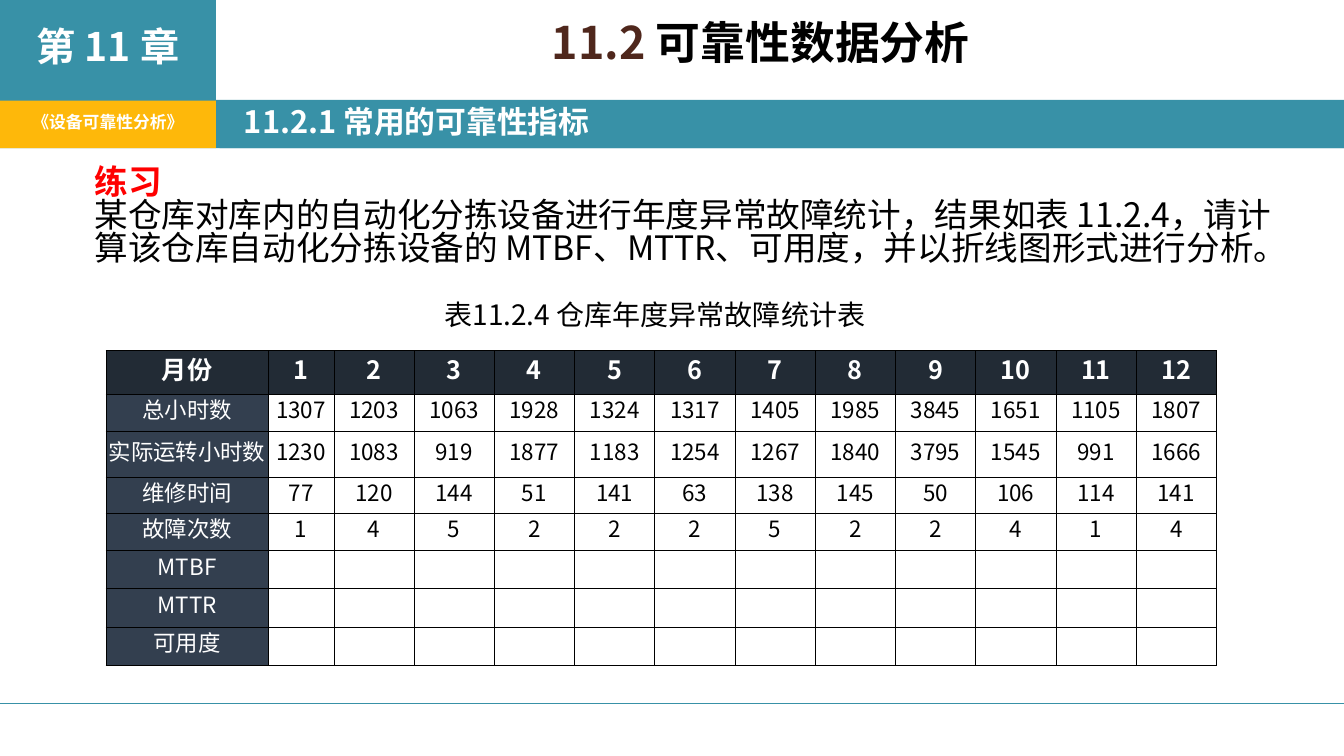
from lxml import etree
from pptx import Presentation
from pptx.dml.color import RGBColor
from pptx.enum.shapes import MSO_CONNECTOR, MSO_SHAPE
from pptx.enum.text import MSO_ANCHOR, MSO_AUTO_SIZE, PP_ALIGN
from pptx.oxml.ns import qn
from pptx.util import Inches, Pt

RECTANGLE = MSO_SHAPE.RECTANGLE
STRAIGHT = MSO_CONNECTOR.STRAIGHT
TOP, MIDDLE = MSO_ANCHOR.TOP, MSO_ANCHOR.MIDDLE
LEFT, CENTER = PP_ALIGN.LEFT, PP_ALIGN.CENTER
FIXED = MSO_AUTO_SIZE.NONE

COLORS = {
    "teal": "3891A7", "amber": "FEB80A", "brown": "4F271C", "red": "FF0000",
    "black": "000000", "white": "FFFFFF", "header": "222B35", "label": "333F4F",
}
SANS, ARIAL = "Noto Sans CJK SC", "Arial"
LINE_SPACING = 0.82

MONTHS = ["月份", *range(1, 13)]
RECORDS = [
    ["总小时数", 1307, 1203, 1063, 1928, 1324, 1317, 1405, 1985, 3845, 1651, 1105, 1807],
    ["实际运转小时数", 1230, 1083, 919, 1877, 1183, 1254, 1267, 1840, 3795, 1545, 991, 1666],
    ["维修时间", 77, 120, 144, 51, 141, 63, 138, 145, 50, 106, 114, 141],
    ["故障次数", 1, 4, 5, 2, 2, 2, 5, 2, 2, 4, 1, 4],
]
RESULTS = [[name] + [""] * 12 for name in ("MTBF", "MTTR", "可用度")]


def rgb(color):
    return RGBColor.from_string(COLORS[color])


class SlideBuilder:
    """Places elements by percentages of the slide's width and height."""

    def __init__(self, deck):
        self.deck = deck
        self.page = deck.slides.add_slide(deck.slide_layouts[5])

    def x(self, share):
        return round(self.deck.slide_width * share / 100)

    def y(self, share):
        return round(self.deck.slide_height * share / 100)

    def area(self, left, top, width, height):
        return self.x(left), self.y(top), self.x(width), self.y(height)

    def style(self, para, size, color, bold=False, align=LEFT, latin=SANS):
        para.alignment = align
        para.line_spacing = LINE_SPACING
        font = para.font
        font.size, font.bold, font.name = Pt(size), bold, latin
        font.color.rgb = rgb(color)
        defaults = para._p.pPr.find(qn("a:defRPr"))
        etree.SubElement(defaults, qn("a:ea"), typeface=SANS)

    def frame(self, box, anchor):
        frame = box.text_frame
        frame.word_wrap = True
        frame.auto_size = FIXED
        frame.vertical_anchor = anchor
        return frame

    def block(self, area, fill, text="", size=12, align=CENTER, inset=0.1):
        box = self.page.shapes.add_shape(RECTANGLE, *self.area(*area))
        box.shadow.inherit = False
        box.fill.solid()
        box.fill.fore_color.rgb = rgb(fill)
        box.line.fill.background()
        if text:
            frame = self.frame(box, MIDDLE)
            frame.margin_left = Inches(inset)
            frame.text = text
            self.style(frame.paragraphs[0], size, "white", True, align)

    def title(self, area, spans, size):
        box = self.page.shapes.title
        box.left, box.top, box.width, box.height = self.area(*area)
        para = self.frame(box, TOP).paragraphs[0]
        self.style(para, size, "black", True, CENTER)
        for text, color in spans:
            span = para.add_run()
            span.text = text
            span.font.color.rgb = rgb(color)

    def text(self, area, lines, size):
        box = self.page.shapes.add_textbox(*self.area(*area))
        frame = self.frame(box, TOP)
        frame.text = "\n".join(line for line, _, _ in lines)
        for para, (_, color, bold) in zip(frame.paragraphs, lines):
            self.style(para, size, color, bold)

    def rule(self, top, color, width):
        line = self.page.shapes.add_connector(
            STRAIGHT, 0, self.y(top), self.x(100), self.y(top))
        line.line.color.rgb = rgb(color)
        line.line.width = Pt(width)
        etree.SubElement(line._element.spPr, qn("a:effectLst"))

    def border(self, cell):
        properties = cell._tc.get_or_add_tcPr()
        for index, side in enumerate(("lnL", "lnR", "lnT", "lnB")):
            edge = etree.Element(qn(f"a:{side}"), w=str(Pt(0.5)))
            fill = etree.SubElement(edge, qn("a:solidFill"))
            etree.SubElement(fill, qn("a:srgbClr"), val=COLORS["black"])
            properties.insert(index, edge)

    def table(self, left, top, widths, heights, rows):
        area = self.area(left, top, sum(widths), sum(heights))
        table = self.page.shapes.add_table(len(rows), len(widths), *area).table
        for column, width in zip(table.columns, widths):
            column.width = self.x(width)
        for row, height in zip(table.rows, heights):
            row.height = self.y(height)
        for r, values in enumerate(rows):
            for c, value in enumerate(values):
                self.cell(table.cell(r, c), str(value), r == 0, c == 0)

    def cell(self, cell, text, is_header, is_label):
        cell.text = text
        cell.vertical_anchor = MIDDLE
        cell.margin_left = cell.margin_right = cell.margin_top = Inches(0.01)
        cell.margin_bottom = Inches(0.05)
        cell.fill.solid()
        fill = "header" if is_header else "label" if is_label else "white"
        cell.fill.fore_color.rgb = rgb(fill)
        self.border(cell)
        self.style(cell.text_frame.paragraphs[0], 18 if is_header else 16,
                   "black" if fill == "white" else "white", is_header, CENTER,
                   SANS if text.isascii() else ARIAL)


def main():
    deck = Presentation()
    deck.slide_width, deck.slide_height = Inches(13.33), Inches(7.5)
    slide = SlideBuilder(deck)

    # Chapter banner and footer rule
    slide.block((0, 13.2, 100, 6.4), "teal")
    slide.block((0, 13.2, 16.07, 6.4), "amber", "《设备可靠性分析》", 12)
    slide.block((0, 0, 16.07, 13.33), "teal", "第 11 章", 28)
    slide.rule(93.07, "teal", 0.79)

    # Section headings
    slide.block((16.35, 13.33, 83.65, 6.27), "teal",
                "11.2.1 常用的可靠性指标", 22, LEFT, 0.24)
    slide.title((17.33, 2.53, 78.54, 10.67),
                [("11.2 ", "brown"), ("可靠性数据分析", "black")], 32)

    # Exercise
    slide.text((6.3, 21.6, 90.92, 17.47), [
        ("练习", "red", True),
        ("某仓库对库内的自动化分拣设备进行年度异常故障统计，结果如表 11.2.4，"
         "请计算该仓库自动化分拣设备的 MTBF、MTTR、可用度，"
         "并以折线图形式进行分析。", "black", False),
    ], 24)

    # Yearly fault table
    slide.text((32.33, 39.47, 35.33, 5.87),
               [("表11.2.4 仓库年度异常故障统计表", "black", False)], 20)
    slide.table(7.88, 46.4, [12.08, 4.88] + [5.97] * 11,
                [5.8, 4.84, 6.07] + [4.84] * 5, [MONTHS, *RECORDS, *RESULTS])

    deck.save("out.pptx")


if __name__ == "__main__":
    main()
